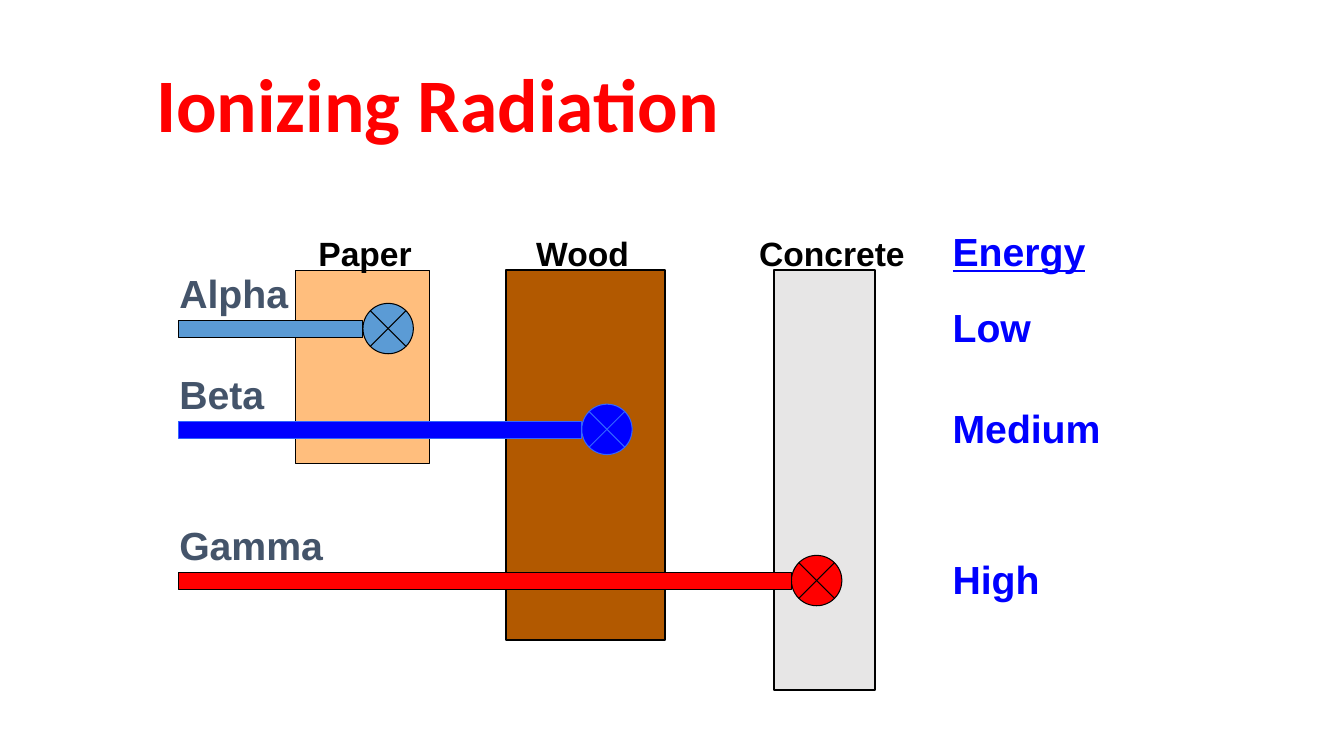
from pptx import Presentation
from pptx.dml.color import RGBColor
from pptx.enum.shapes import MSO_SHAPE as Preset
from pptx.enum.text import MSO_ANCHOR as Anchor, MSO_AUTO_SIZE as AutoSize
from pptx.util import Emu, Pt

PX = 9144
BLACK, RED, BLUE, SLATE = "000000", "FF0000", "0000FF", "44546A"


def px(*lengths):
    return [Emu(length * PX) for length in lengths]


def color(value):
    return RGBColor.from_string(value)


class Diagram:
    font = "Arial"
    text_size = 28

    def __init__(self, slide):
        self.slide = slide

    def shape(self, preset, box, fill, line=BLACK, weight=0.75):
        shape = self.slide.shapes.add_shape(preset, *px(*box))
        shape.shadow.inherit = False
        shape.fill.solid()
        shape.fill.fore_color.rgb = color(fill)
        shape.line.color.rgb = color(line)
        shape.line.width = Pt(weight)

    def text(self, words, box, ink, size=text_size, underline=None):
        frame = self.slide.shapes.add_textbox(*px(*box)).text_frame
        frame.word_wrap = False
        frame.auto_size = AutoSize.SHAPE_TO_FIT_TEXT
        paragraph = frame.paragraphs[0]
        paragraph.text = words
        font = paragraph.font
        font.name, font.size, font.bold = self.font, Pt(size), True
        font.underline = underline
        font.color.rgb = color(ink)
        return frame

    def title(self, words, box):
        frame = self.text(words, box, RED, 54)
        frame.word_wrap = True
        frame.auto_size = AutoSize.NONE
        frame.vertical_anchor = Anchor.MIDDLE
        frame.paragraphs[0].font.name = "Calibri"
        frame.paragraphs[0].line_spacing = 0.9


WALL_TOP = 268
WALLS = [
    ("Concrete", 743, 165, 768, 100, 417, "E7E6E6", 1.5),
    ("Wood", 522, 113, 502, 158, 367, "B25900", 1.5),
    ("Paper", 306, 113, 293, 133, 192, "FFBE7D", 0.75),
]
RAY_LEFT, BEAM_HEIGHT, STOP_SIZE, ENERGY_LEFT = 177, 17, 50, 935
RAYS = [
    ("Alpha", 128, "Low", 98, 326, 360, "5B9BD5", BLACK),
    ("Beta", 105, "Medium", 167, 426, 577, BLUE, "3366FF"),
    ("Gamma", 163, "High", 107, 576, 785, RED, BLACK),
]


def main():
    presentation = Presentation()
    presentation.slide_width, presentation.slide_height = px(1333, 750)
    slide = presentation.slides.add_slide(presentation.slide_layouts[6])
    diagram = Diagram(slide)
    diagram.title("Ionizing Radiation", (145, 66, 950, 83))

    for _, _, _, left, width, height, fill, weight in WALLS:
        diagram.shape(Preset.RECTANGLE, (left, WALL_TOP, width, height), fill, weight=weight)
    for name, label_width, *_ in [(wall[0], wall[2]) for wall in WALLS]:
        left = next(wall[1] for wall in WALLS if wall[0] == name)
        diagram.text(name, (left, 226, label_width, 50), BLACK, 24)

    diagram.text("Energy", (ENERGY_LEFT, 221, 153, 57), BLUE, underline=True)
    for name, name_width, energy, energy_width, middle, end, fill, line in RAYS:
        stop = (end, middle - STOP_SIZE // 2, STOP_SIZE, STOP_SIZE)
        beam = (RAY_LEFT, middle - BEAM_HEIGHT // 2, end - RAY_LEFT, BEAM_HEIGHT)
        diagram.shape(Preset.FLOWCHART_SUMMING_JUNCTION, stop, fill, line)
        diagram.shape(Preset.RECTANGLE, beam, fill, line)
        diagram.text(name, (168, middle - 64, name_width, 57), SLATE)
        diagram.text(energy, (ENERGY_LEFT, middle - 30, energy_width, 57), BLUE)

    presentation.save("out.pptx")


if __name__ == "__main__":
    main()
